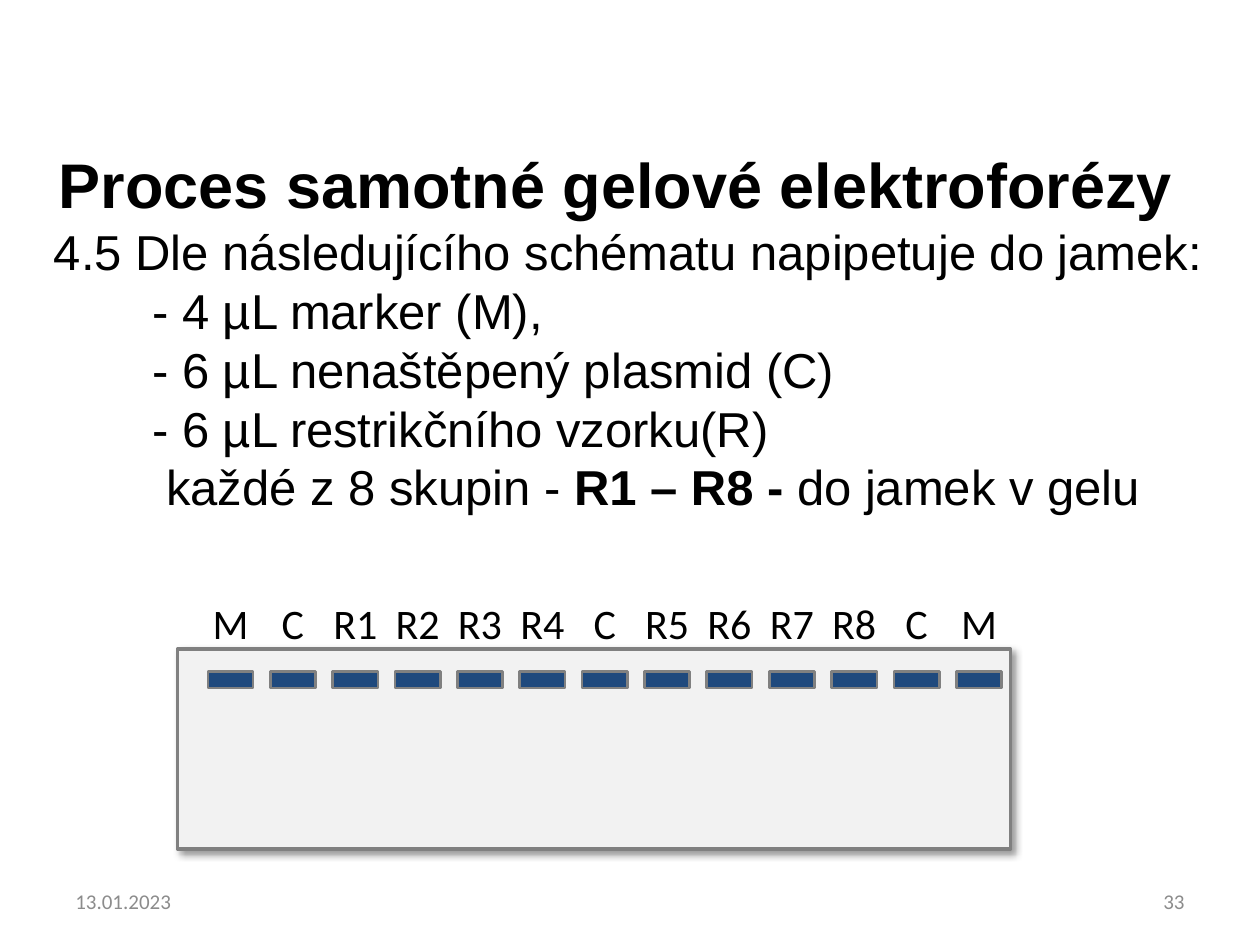
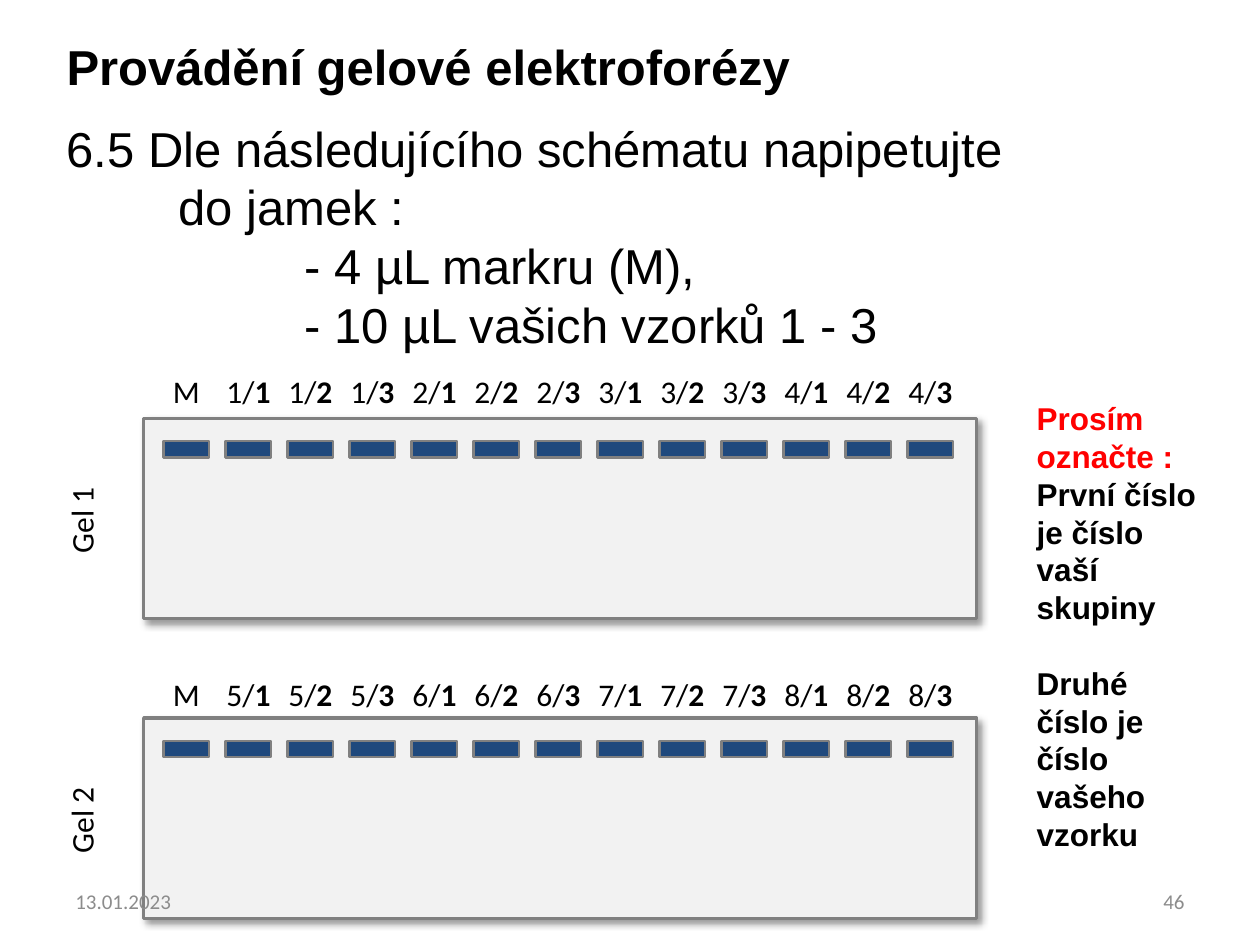
import pptx
import pptx.dml.color
import pptx.enum.shapes
import pptx.enum.text
import pptx.oxml
import pptx.util

RGB = pptx.dml.color.RGBColor
ALIGN = pptx.enum.text.PP_ALIGN
ANCHOR = pptx.enum.text.MSO_ANCHOR

BLACK = RGB(0x00, 0x00, 0x00)
RED = RGB(0xFF, 0x00, 0x00)
FOOTER_GREY = RGB(0x8C, 0x8C, 0x8C)
GEL_FILL = RGB(0xF2, 0xF2, 0xF2)
EDGE_GREY = RGB(0x80, 0x80, 0x80)
WELL_BLUE = RGB(0x1F, 0x49, 0x7D)

COLUMNS, ROWS = 100, 75
CELL = pptx.util.Inches(0.1)
GEL_WIDTH, GEL_HEIGHT = 66.1, 15.9
WELL_WIDTH, WELL_HEIGHT, WELL_DROP = 3.6, 1.3, 1.8

SHADOW = (
    '<a:effectLst xmlns:a="http://schemas.openxmlformats.org/drawingml/2006/main">'
    '<a:outerShdw blurRad="50800" dist="38100" dir="2700000" algn="tl" rotWithShape="0">'
    '<a:srgbClr val="000000"><a:alpha val="40000"/></a:srgbClr>'
    '</a:outerShdw></a:effectLst>'
)


def cells(*counts):
    """Turn counts of grid cells into lengths."""
    return [round(count * CELL) for count in counts]


def add_box(page, left, top, width, height, wrap=True, anchor=ANCHOR.TOP):
    """Add an empty text box placed on the grid."""
    box = page.shapes.add_textbox(*cells(left, top, width, height))
    box.text_frame.word_wrap = wrap
    box.text_frame.vertical_anchor = anchor
    return box


def write(para, text, size, font="Calibri", color=BLACK, align=ALIGN.LEFT):
    """Write a paragraph in which text between asterisks is bold."""
    para.alignment = align
    for index, part in enumerate(text.split("*")):
        if part:
            span = para.add_run()
            span.text = part
            span.font.name = font
            span.font.size = pptx.util.Pt(size)
            span.font.bold = index % 2 == 1
            span.font.color.rgb = color


def add_paragraphs(box, items):
    """Fill a box with Arial items: text, size, colour, margin, hanging, space before."""
    frame = box.text_frame
    for index, (text, size, color, margin, hanging, before) in enumerate(items):
        para = frame.add_paragraph() if index else frame.paragraphs[0]
        write(para, text, size, "Arial", color)
        para.space_before = pptx.util.Pt(before)
        properties = para._p.get_or_add_pPr()
        left, indent = cells(margin, -hanging)
        properties.set("marL", str(left))
        properties.set("indent", str(indent))


def add_label(page, text, size, center, top, width, height):
    """Add a short label centred on a column."""
    box = add_box(page, center - width / 2, top, width, height, wrap=False)
    write(box.text_frame.paragraphs[0], text, size, align=ALIGN.CENTER)
    return box


def add_rectangle(page, left, top, width, height, fill, line_width):
    """Add a grey-edged rectangle."""
    shape = page.shapes.add_shape(
        pptx.enum.shapes.MSO_SHAPE.RECTANGLE, *cells(left, top, width, height))
    shape.shadow.inherit = False
    shape.fill.solid()
    shape.fill.fore_color.rgb = fill
    shape.line.color.rgb = EDGE_GREY
    shape.line.width = pptx.util.Pt(line_width)
    return shape


def add_gel(page, left, top, first_well, pitch, samples, size, rise):
    """Draw a gel with evenly spaced wells and a sample name above each."""
    gel = add_rectangle(page, left, top, GEL_WIDTH, GEL_HEIGHT, GEL_FILL, 2)
    properties = gel._element.spPr
    properties.remove(properties.find(pptx.oxml.ns.qn("a:effectLst")))
    properties.append(pptx.oxml.parse_xml(SHADOW))
    for index, sample in enumerate(samples):
        well = left + first_well + index * pitch
        add_rectangle(page, well, top + WELL_DROP, WELL_WIDTH, WELL_HEIGHT, WELL_BLUE, 1.5)
        add_label(page, sample, size, well + WELL_WIDTH / 2, top - rise, 5.6, size / 6 + 1)


def add_footer(page, number):
    """Add the date and the page number."""
    width = 23.3
    for left, text, align in ((5, "13.01.2023", ALIGN.LEFT),
                              (COLUMNS - 5 - width, number, ALIGN.RIGHT)):
        box = add_box(page, left, 69.5, width, 4, anchor=ANCHOR.MIDDLE)
        write(box.text_frame.paragraphs[0], text, 12, color=FOOTER_GREY, align=align)


def build_process_page(page):
    """Build the page with the shared gel of all groups."""
    box = add_box(page, 3.3, 11.1, 94.3, 30.6)
    add_paragraphs(box, [
        ("*Proces samotné gelové elektroforézy*", 36, BLACK, 0.4, 0, 0),
        ("4.5 Dle následujícího schématu napipetuje do jamek:", 28, BLACK, 7.8, 7.8, 0),
        ("- 4 µL marker (M),", 28, BLACK, 7.8, 0, 0),
        ("- 6 µL nenaštěpený plasmid (C)", 28, BLACK, 7.8, 0, 0),
        ("- 6 µL restrikčního vzorku(R)", 28, BLACK, 7.8, 0, 0),
        ("každé z 8 skupin - *R1 – R8 - *do jamek v gelu", 28, BLACK, 8.9, 0, 0),
    ])
    samples = "M C R1 R2 R3 R4 C R5 R6 R7 R8 C M".split()
    add_gel(page, 14.1, 51.5, 2.4, 4.95, samples, 24, 4.6)
    add_footer(page, "33")


def build_groups_page(page):
    """Build the page with two gels of four groups each."""
    box = add_box(page, 4.3, 2.4, 92.8, 27)
    add_paragraphs(box, [
        ("*Provádění gelové elektroforézy*", 28, BLACK, 0, 0, 0),
        ("6.5 Dle následujícího schématu napipetujte do\u00a0jamek :", 28, BLACK, 8.9, 8.9, 13),
        ("- 4 µL markru (M),", 28, BLACK, 18.9, 0, 0),
        ("- 10 µL vašich vzorků 1 - 3", 28, BLACK, 18.9, 0, 0),
    ])
    for gel, (top, rise) in enumerate(((33.2, 4.2), (57, 3.9))):
        groups = range(4 * gel + 1, 4 * gel + 5)
        samples = ["M"] + [f"{group}/*{tube}*" for group in groups for tube in (1, 2, 3)]
        add_gel(page, 11.4, top, 1.6, 4.92, samples, 18, rise)
        name = add_label(page, f"Gel {gel + 1}", 18, 6.45, top + 6.1, 7.3, 4)
        name.rotation = 270
    note = add_box(page, 81.3, 31.2, 15, 37.4)
    add_paragraphs(note, [
        ("*Prosím označte :*", 18, RED, 0, 0, 0),
        ("*První číslo je číslo vaší skupiny*", 18, BLACK, 0, 0, 0),
        ("*Druhé číslo je číslo vašeho vzorku*", 18, BLACK, 0, 0, 21.6),
    ])
    add_footer(page, "46")


def main():
    """Build and save the deck."""
    deck = pptx.Presentation()
    deck.slide_width, deck.slide_height = cells(COLUMNS, ROWS)
    for build in (build_process_page, build_groups_page):
        build(deck.slides.add_slide(deck.slide_layouts[6]))
    deck.save("out.pptx")


if __name__ == "__main__":
    main()
